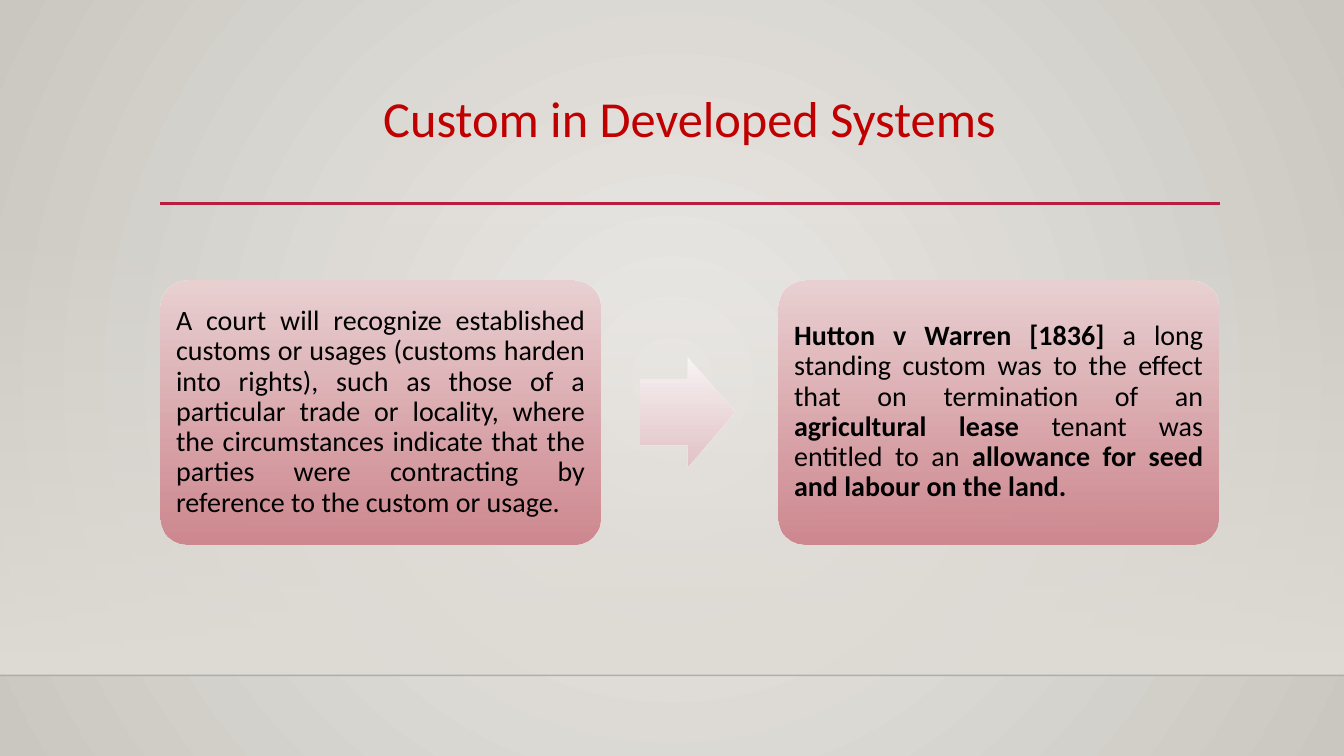
import pptx
import pptx.util
import pptx.dml.color
import pptx.enum.shapes
import pptx.enum.text
import pptx.oxml.ns
import lxml.etree

Inches = pptx.util.Inches
Pt = pptx.util.Pt
RGBColor = pptx.dml.color.RGBColor
SHAPE = pptx.enum.shapes.MSO_SHAPE
ALIGN = pptx.enum.text.PP_ALIGN
ANCHOR = pptx.enum.text.MSO_ANCHOR

BACK_LIGHT = RGBColor(0xEC, 0xEA, 0xE7)
BACK_DARK = RGBColor(0xCA, 0xC7, 0xC1)
WALL = RGBColor(0xDF, 0xDB, 0xD5)
FLOOR_LINE = RGBColor(0x00, 0x00, 0x01)
CRIMSON = RGBColor(0xB7, 0x1E, 0x42)
TITLE_RED = RGBColor(0xC0, 0x00, 0x00)
BLACK = RGBColor(0x00, 0x00, 0x00)
CARD_TOP = RGBColor(0xEA, 0xD1, 0xD3)
CARD_BOTTOM = RGBColor(0xCD, 0x82, 0x8A)
ARROW_TOP = RGBColor(0xFA, 0xF5, 0xF6)
ARROW_BOTTOM = RGBColor(0xE2, 0xC1, 0xC4)

WIDTH, HEIGHT = 13.33, 7.5
LEFT, CONTENT_WIDTH = 1.59, 10.5
CARD_WIDTH, CARD_HEIGHT, CARD_TOP_EDGE = 4.37, 2.62, 2.78
ARROW_WIDTH, ARROW_HEIGHT = 0.93, 1.08


def add_child(parent, tag, **attributes):
    return lxml.etree.SubElement(parent, pptx.oxml.ns.qn(tag), attributes)


class SlideBuilder:
    font = "Calibri"

    def __init__(self, page):
        self.page = page

    def set_opacity(self, color_element, percent):
        if percent < 100:
            add_child(color_element, "a:alpha", val=str(percent * 1000))

    def set_gradient(self, fill, colors):
        fill.gradient()
        for stop, color, position in zip(fill.gradient_stops, colors, (0, 1)):
            stop.color.rgb = color
            stop.position = position
        fill.gradient_angle = 270

    def background(self, center, edge):
        self.set_gradient(self.page.background.fill, (center, edge))
        gradient = self.page._element.xpath(".//p:bg//a:gradFill")[0]
        gradient.remove(gradient.find(pptx.oxml.ns.qn("a:lin")))
        circle = add_child(gradient, "a:path", path="circle")
        add_child(circle, "a:fillToRect", l="50000", t="50000", r="50000", b="50000")

    def shape(self, kind, left, top, width, height, colors, opacities, adjustments=()):
        shape = self.page.shapes.add_shape(
            kind, Inches(left), Inches(top), Inches(width), Inches(height))
        shape.shadow.inherit = False
        shape.line.fill.background()
        for index, value in enumerate(adjustments):
            shape.adjustments[index] = value
        self.set_gradient(shape.fill, colors)
        stop_colors = shape._element.spPr.xpath("./a:gradFill//a:srgbClr")
        for color_element, opacity in zip(stop_colors, opacities):
            self.set_opacity(color_element, opacity)
        return shape

    def rule(self, left, right, top, color, weight, opacity=100):
        line = self.page.shapes.add_connector(
            pptx.enum.shapes.MSO_CONNECTOR.STRAIGHT,
            Inches(left), Inches(top), Inches(right), Inches(top))
        line.line.color.rgb = color
        line.line.width = Pt(weight)
        properties = line._element.spPr
        self.set_opacity(properties.xpath(".//a:srgbClr")[0], opacity)
        add_child(properties, "a:effectLst")

    def fill_text(self, box, spans, size, color, align, anchor):
        frame = box.text_frame
        frame.word_wrap = True
        frame.vertical_anchor = anchor
        paragraph = frame.paragraphs[0]
        paragraph.alignment = align
        paragraph.line_spacing = 0.9
        for words, bold in spans:
            span = paragraph.add_run()
            span.text = words
            span.font.name = self.font
            span.font.size = Pt(size)
            span.font.bold = bold
            span.font.color.rgb = color

    def title(self, words):
        box = self.page.shapes.add_textbox(
            Inches(LEFT), Inches(0.88), Inches(CONTENT_WIDTH), Inches(1.15))
        self.fill_text(box, [(words, False)], 36, TITLE_RED, ALIGN.CENTER, ANCHOR.TOP)

    def card(self, left, spans):
        card = self.shape(SHAPE.ROUNDED_RECTANGLE, left, CARD_TOP_EDGE, CARD_WIDTH,
                          CARD_HEIGHT, (CARD_TOP, CARD_BOTTOM), (100, 92), (0.1,))
        frame = card.text_frame
        # The rounded corners already inset the text a little
        frame.margin_left = frame.margin_right = Inches(0.08)
        frame.margin_top = frame.margin_bottom = Inches(0.08)
        self.fill_text(card, spans, 20, BLACK, ALIGN.JUSTIFY, ANCHOR.MIDDLE)


def main():
    deck = pptx.Presentation()
    deck.slide_width, deck.slide_height = Inches(WIDTH), Inches(HEIGHT)
    builder = SlideBuilder(deck.slides.add_slide(deck.slide_layouts[6]))

    # Backdrop
    builder.background(BACK_LIGHT, BACK_DARK)
    builder.shape(SHAPE.RECTANGLE, 0, 2.21, WIDTH, 4.49, (WALL, WALL), (0, 100))
    builder.rule(0, WIDTH, 6.7, FLOOR_LINE, 1, opacity=20)

    # Heading
    builder.rule(LEFT, 12.1, 2.02, CRIMSON, 2.5)
    builder.title("Custom in Developed Systems")

    # Principle, arrow and case
    builder.card(LEFT, [(
        "A court will recognize established customs or usages (customs harden into "
        "rights), such as those of a particular trade or locality, where the "
        "circumstances indicate that the parties were contracting by reference to "
        "the custom or usage.", False)])
    arrow_top = CARD_TOP_EDGE + (CARD_HEIGHT - ARROW_HEIGHT) / 2
    builder.shape(SHAPE.RIGHT_ARROW, 6.35, arrow_top, ARROW_WIDTH, ARROW_HEIGHT,
                  (ARROW_TOP, ARROW_BOTTOM), (100, 92), (0.6, 0.5))
    builder.card(LEFT + CONTENT_WIDTH - CARD_WIDTH, [
        ("Hutton v Warren [1836] ", True),
        ("a long standing custom was to the effect that on termination of an ", False),
        ("agricultural lease ", True),
        ("tenant was entitled to an ", False),
        ("allowance for seed and labour on the land.", True)])

    deck.save("out.pptx")


if __name__ == "__main__":
    main()
